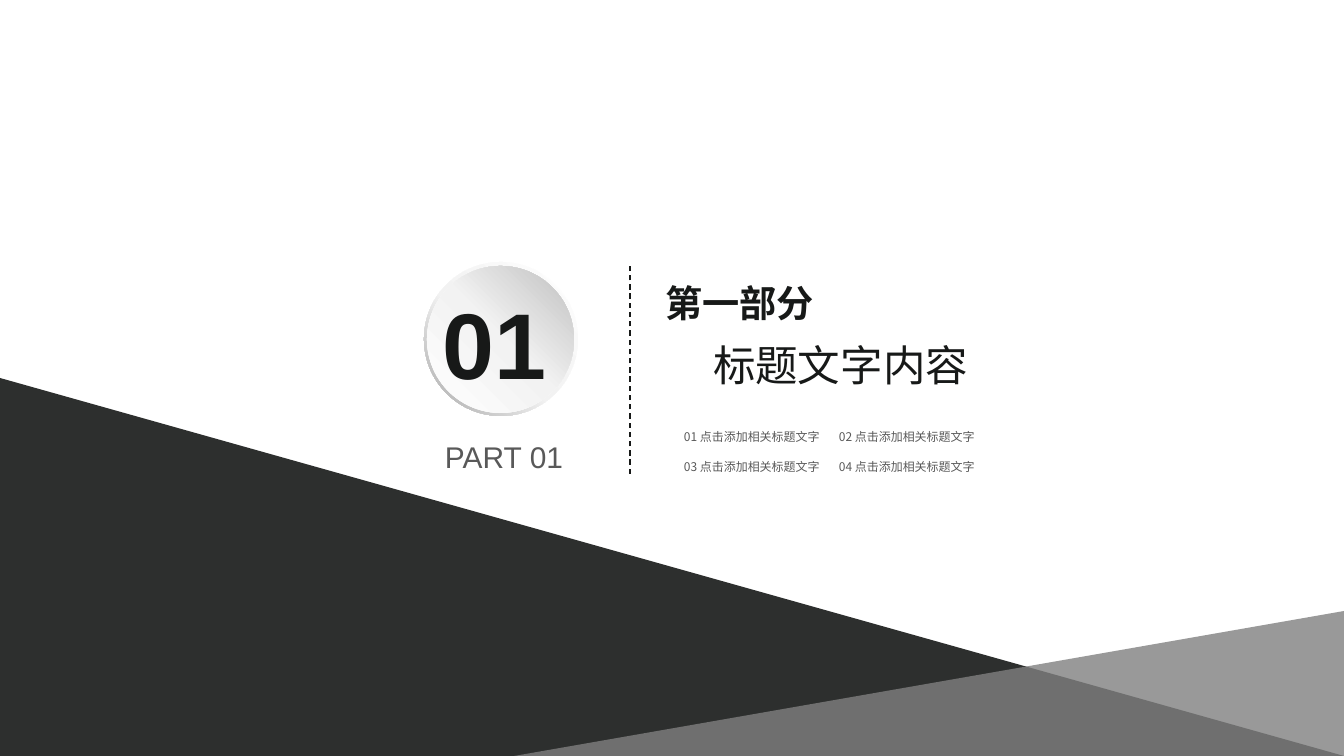
from dataclasses import dataclass

from lxml import etree
from pptx import Presentation
from pptx import util as u
from pptx.dml.color import RGBColor
from pptx.enum import dml, shapes, text
from pptx.oxml.ns import qn

PX = 9565  # EMU in one px
WIDTH, HEIGHT = 1344, 756


@dataclass(frozen=True)
class Theme:
    dark: str = "171918"
    grey: str = "808080"
    muted: str = "595959"
    latin: str = "Arial"
    cjk: str = "Noto Sans CJK SC"
    number_size: float = 70.3
    caption_size: float = 22.5
    heading_size: int = 28
    title_size: int = 32
    label_size: int = 9


T = Theme()

NUMBER, CAPTION = "01", "PART 01"
HEADING, TITLE = "第一部分", "标题文字内容"
LABELS = [
    ["01 点击添加相关标题文字", "02 点击添加相关标题文字"],
    ["03 点击添加相关标题文字", "04 点击添加相关标题文字"],
]
# points, colour, opacity in percent
TRIANGLES = [
    ([(0, 378), (WIDTH, HEIGHT), (0, HEIGHT)], T.dark, 90),
    ([(WIDTH, 611), (514, HEIGHT), (WIDTH, HEIGHT)], T.grey, 80),
]
# shape, left, top, size, gradient stops, angle
BADGE = [
    (shapes.MSO_SHAPE.DONUT, 424, 262, 154,
     [(0, "FFFFFF"), (55, "F2F2F2"), (100, "A6A6A6")], 135),
    (shapes.MSO_SHAPE.OVAL, 427, 266, 147,
     [(0, "FFFFFF"), (51, "F2F2F2"), (100, "BFBFBF")], 315),
]
DIVIDER_X, DIVIDER_TOP, DIVIDER_BOTTOM = 630, 266, 474
LABEL_LEFT, LABEL_TOP, LABEL_STEP_X, LABEL_STEP_Y = 684, 430, 155, 30
TITLE_INDENT = 48


def px(*values):
    return [u.Emu(v * PX) for v in values]


def add_triangle(s, points, colour, opacity):
    builder = s.shapes.build_freeform(*points[0], scale=float(PX))
    builder.add_line_segments(points[1:], close=True)
    sp = builder.convert_to_shape()
    sp.shadow.inherit = False
    sp.line.fill.background()
    sp.fill.solid()
    sp.fill.fore_color.rgb = RGBColor.from_string(colour)
    clr = sp._element.spPr.find(qn("a:solidFill"))[0]
    etree.SubElement(clr, qn("a:alpha"), val=str(opacity * 1000))


def add_disc(s, kind, left, top, size, stops, angle):
    sp = s.shapes.add_shape(kind, *px(left, top, size, size))
    sp.shadow.inherit = False
    sp.line.fill.background()
    sp.fill.gradient()
    grad = sp._element.spPr.find(qn("a:gradFill"))
    for child in list(grad):
        grad.remove(child)
    stop_list = etree.SubElement(grad, qn("a:gsLst"))
    for position, colour in stops:
        gs = etree.SubElement(stop_list, qn("a:gs"), pos=str(position * 1000))
        etree.SubElement(gs, qn("a:srgbClr"), val=colour)
    etree.SubElement(grad, qn("a:lin"), ang=str(angle * 60000), scaled="0")
    return sp


def add_frame(s, left, top, width, height):
    """Add an empty text box without insets or wrapping."""
    tf = s.shapes.add_textbox(*px(left, top, width, height)).text_frame
    tf.margin_left = tf.margin_right = tf.margin_top = tf.margin_bottom = 0
    tf.word_wrap = False
    tf.vertical_anchor = text.MSO_ANCHOR.TOP
    return tf


def add_run(p, words, size, font, colour, bold=False):
    r = p.add_run()
    r.text = words
    r.font.size = u.Pt(size)
    r.font.bold = bold
    r.font.color.rgb = RGBColor.from_string(colour)
    r.font.name = font
    etree.SubElement(r._r.get_or_add_rPr(), qn("a:ea"), typeface=font)


def add_divider(s):
    line = s.shapes.add_connector(
        shapes.MSO_CONNECTOR.STRAIGHT,
        *px(DIVIDER_X, DIVIDER_BOTTOM, DIVIDER_X, DIVIDER_TOP))
    line.line.color.rgb = RGBColor.from_string(T.dark)
    line.line.width = u.Pt(1)
    line.line.dash_style = dml.MSO_LINE.DASH
    etree.SubElement(line._element.spPr, qn("a:effectLst"))


def add_headings(s):
    tf = add_frame(s, 665, 280, 310, 131)
    add_run(tf.paragraphs[0], HEADING, T.heading_size, T.cjk, T.dark, bold=True)
    p = tf.add_paragraph()
    p.space_before = u.Pt(11)
    p._p.get_or_add_pPr().set("marL", str(TITLE_INDENT * PX))
    add_run(p, TITLE, T.title_size, T.cjk, T.dark)


def main():
    prs = Presentation()
    prs.slide_width, prs.slide_height = px(WIDTH, HEIGHT)
    s = prs.slides.add_slide(prs.slide_layouts[6])

    for triangle in TRIANGLES:
        add_triangle(s, *triangle)
    add_headings(s)
    add_divider(s)

    ring, _ = [add_disc(s, *disc) for disc in BADGE]
    ring.adjustments[0] = 0.05
    add_run(add_frame(s, 443, 286, 133, 113).paragraphs[0],
            NUMBER, T.number_size, T.latin, T.dark, bold=True)
    add_run(add_frame(s, 445, 439, 133, 36).paragraphs[0],
            CAPTION, T.caption_size, T.latin, T.muted)

    for row, labels in enumerate(LABELS):
        for col, label in enumerate(labels):
            tf = add_frame(s, LABEL_LEFT + col * LABEL_STEP_X,
                           LABEL_TOP + row * LABEL_STEP_Y, 140, 17)
            add_run(tf.paragraphs[0], label, T.label_size, T.cjk, T.muted)

    prs.save("out.pptx")


if __name__ == "__main__":
    main()
